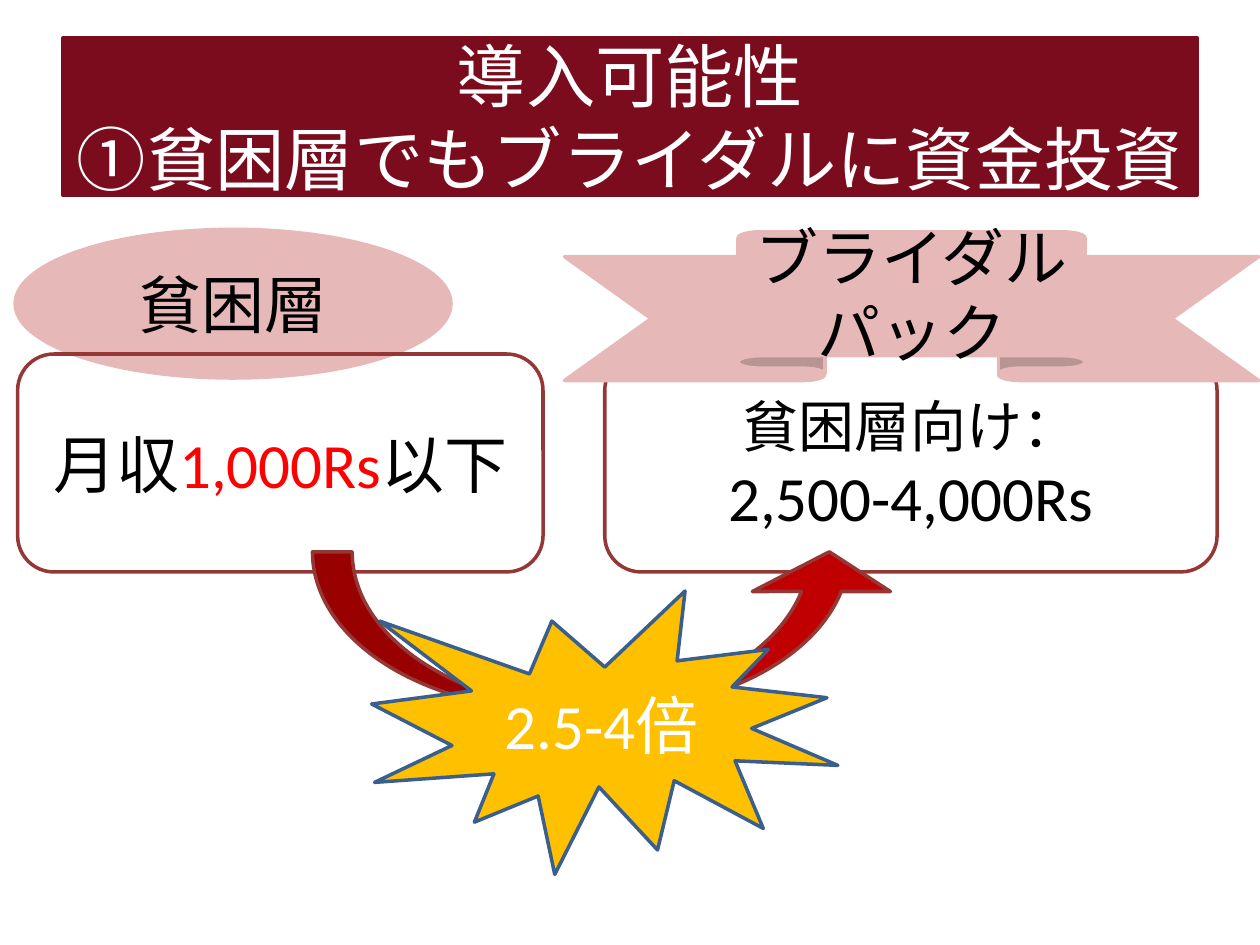
from pptx import Presentation
from pptx.dml.color import RGBColor
from pptx.enum.shapes import MSO_SHAPE
from pptx.enum.text import MSO_ANCHOR, PP_ALIGN
from pptx.util import Inches, Pt

FONT = "Calibri"
BLACK, WHITE, RED = "000000", "FFFFFF", "FF0000"
PINK, BROWN, WINE = "E6B9B8", "953735", "7A0C1E"


def rgb(value):
    return RGBColor.from_string(value)


def add_figure(s, kind, box, fill, line):
    """Add a preset shape; a fill of None leaves it open."""
    sp = s.shapes.add_shape(kind, *[Inches(v) for v in box])
    sp.shadow.inherit = False
    if fill:
        sp.fill.solid()
        sp.fill.fore_color.rgb = rgb(fill)
    else:
        sp.fill.background()
    sp.line.color.rgb = rgb(line)
    sp.line.width = Pt(2)
    return sp


def add_run(p, text, size, color):
    r = p.add_run()
    r.text = text
    r.font.size = Pt(size)
    r.font.name = FONT
    r.font.color.rgb = rgb(color)


def add_label(sp, *paragraphs):
    """Write centred paragraphs, each a list of (text, size, color) runs."""
    tf = sp.text_frame
    tf.word_wrap = True
    tf.vertical_anchor = MSO_ANCHOR.MIDDLE
    for i, runs in enumerate(paragraphs):
        p = tf.add_paragraph() if i else tf.paragraphs[0]
        p.alignment = PP_ALIGN.CENTER
        for run in runs:
            add_run(p, *run)


def add_title(s, first, second):
    sp = add_figure(s, MSO_SHAPE.RECTANGLE, (0.5, 0.3, 9, 1.25), WINE, WINE)
    sp.text_frame.margin_left = sp.text_frame.margin_right = Inches(0.05)
    add_label(sp, [(first, 39.6, WHITE)])
    p = sp.text_frame.paragraphs[0]
    p.add_line_break()
    add_run(p, second, 39.6, WHITE)


def add_income(s):
    heading = add_figure(s, MSO_SHAPE.OVAL, (0.12, 1.82, 3.46, 1.18), PINK, PINK)
    add_label(heading, [("貧困層", 36, BLACK)])
    card = add_figure(s, MSO_SHAPE.ROUNDED_RECTANGLE, (0.14, 2.81, 4.17, 1.73), None, BROWN)
    add_label(card, [("月収", 36, BLACK), ("1,000Rs", 36, RED), ("以下", 36, BLACK)])


def add_bridal_pack(s):
    card = add_figure(s, MSO_SHAPE.ROUNDED_RECTANGLE, (4.8, 2.81, 4.86, 1.73), None, BROWN)
    add_label(card, [("貧困層向け：", 32, BLACK)], [("2,500-4,000Rs", 36, BLACK)])
    heading = add_figure(s, MSO_SHAPE.UP_RIBBON, (4.48, 1.84, 5.51, 1.18), PINK, PINK)
    add_label(heading, [("ブライダルパック", 36, BLACK)])


def add_ratio(s):
    arrow = add_figure(s, MSO_SHAPE.CURVED_UP_ARROW, (2.48, 4.38, 4.65, 1.26), "C00000", BROWN)
    arrow.adjustments[1] = 0.87
    burst = add_figure(s, MSO_SHAPE.EXPLOSION1, (2.95, 4.69, 3.7, 2.25), "FFC000", "3A5F8C")
    add_label(burst, [("2.5-4倍", 36, WHITE)])


def main():
    prs = Presentation()
    prs.slide_width, prs.slide_height = Inches(10), Inches(7.5)
    s = prs.slides.add_slide(prs.slide_layouts[6])
    add_income(s)
    add_bridal_pack(s)
    add_ratio(s)
    add_title(s, "導入可能性", "①貧困層でもブライダルに資金投資")
    prs.save("out.pptx")


if __name__ == "__main__":
    main()
